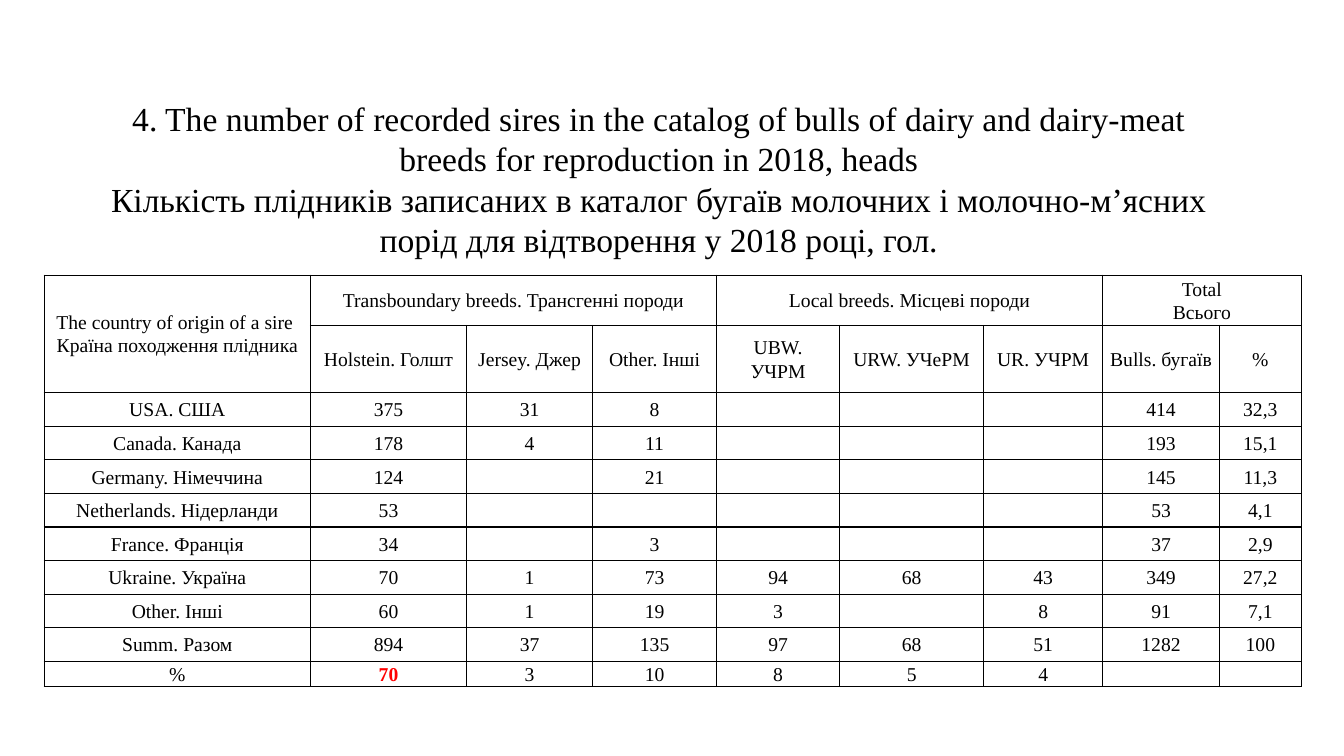
import pptx
import pptx.dml.color
import pptx.enum.text
import pptx.oxml
import pptx.oxml.ns
import pptx.util

COLORS = {"ink": "000000", "accent": "FF0000"}
FONT = "Times New Roman"
COLUMNS, ROWS = 40, 22.5

TITLE = [
    "4. The number of recorded sires in the catalog of bulls of dairy and dairy-meat breeds for reproduction in 2018, heads",
    "Кількість плідників записаних в каталог бугаїв молочних і молочно-м’ясних порід для відтворення у 2018 році, гол.",
]
BREED_TABLE = [
    ["The country of origin of a sire \nКраїна походження плідника", "Transboundary breeds. Трансгенні породи", "", "",
     "Local breeds. Місцеві породи", "", "", "Total\nВсього", ""],
    ["", "Holstein. Голшт", "Jersey. Джер", "Other. Інші", "UBW. УЧРМ", "URW. УЧеРМ", "UR. УЧРМ", "Bulls. бугаїв", "%"],
    ["USA. США", "375", "31", "8", "", "", "", "414", "32,3"],
    ["Canada. Канада", "178", "4", "11", "", "", "", "193", "15,1"],
    ["Germany. Німеччина", "124", "", "21", "", "", "", "145", "11,3"],
    ["Netherlands. Нідерланди", "53", "", "", "", "", "", "53", "4,1"],
    ["France. Франція", "34", "", "3", "", "", "", "37", "2,9"],
    ["Ukraine. Україна", "70", "1", "73", "94", "68", "43", "349", "27,2"],
    ["Other. Інші", "60", "1", "19", "3", "", "8", "91", "7,1"],
    ["Summ. Разом", "894", "37", "135", "97", "68", "51", "1282", "100"],
    ["%", "70", "3", "10", "8", "5", "4", "", ""],
]
COLUMN_WIDTHS = [7.92, 4.65, 3.75, 3.69, 3.66, 4.29, 3.54, 3.48, 2.43]
ROW_HEIGHTS = [1, 2] + [1] * 8 + [0.5]
MERGES = [((0, 0), (1, 0)), ((0, 1), (0, 3)), ((0, 4), (0, 6)), ((0, 7), (0, 8))]
HIGHLIGHT = (10, 1)


def set_all(target, values):
    for name, value in values.items():
        setattr(target, name, value)


class Page:
    """Holds the slide and its style; lengths are columns and rows of the grid."""

    def __init__(self, deck):
        self.slide = deck.slides.add_slide(deck.slide_layouts[5])
        self.column = deck.slide_width / COLUMNS
        self.row = deck.slide_height / ROWS

    def across(self, columns):
        return pptx.util.Emu(round(columns * self.column))

    def down(self, rows):
        return pptx.util.Emu(round(rows * self.row))

    def fill_text(self, frame, lines, size, spacing, color="ink", bold=False):
        for index, line in enumerate(lines):
            para = frame.paragraphs[0] if index == 0 else frame.add_paragraph()
            set_all(para, {"alignment": pptx.enum.text.PP_ALIGN.CENTER, "line_spacing": spacing,
                           "space_before": pptx.util.Pt(0)})
            if line:
                span = para.add_run()
                span.text = line
                set_all(span.font, {"name": FONT, "size": pptx.util.Pt(size), "bold": bold})
                span.font.color.rgb = pptx.dml.color.RGBColor.from_string(COLORS[color])
            else:
                # The end mark's size sets the height of an empty cell.
                end_mark = pptx.oxml.parse_xml(f'<a:endParaRPr {pptx.oxml.ns.nsdecls("a")} sz="{size * 100}"/>')
                para._p.append(end_mark)

    def title(self, lines, left, top, width, height):
        box = self.slide.shapes.title
        set_all(box, {"left": self.across(left), "top": self.down(top),
                      "width": self.across(width), "height": self.down(height)})
        set_all(box.text_frame, {"word_wrap": True, "vertical_anchor": pptx.enum.text.MSO_ANCHOR.TOP,
                                 "auto_size": pptx.enum.text.MSO_AUTO_SIZE.SHAPE_TO_FIT_TEXT})
        self.fill_text(box.text_frame, lines, 24, 1.0)

    def outline(self, cell):
        properties = cell._tc.get_or_add_tcPr()
        for side in "LRTB":
            properties.append(pptx.oxml.parse_xml(
                f'<a:ln{side} {pptx.oxml.ns.nsdecls("a")} w="12700"><a:solidFill>'
                f'<a:srgbClr val="{COLORS["ink"]}"/></a:solidFill></a:ln{side}>'))

    def table(self, values, left, top):
        frame = self.slide.shapes.add_table(
            len(values), len(COLUMN_WIDTHS), self.across(left), self.down(top),
            self.across(sum(COLUMN_WIDTHS)), self.down(sum(ROW_HEIGHTS)))
        grid = frame.table
        set_all(grid, {"first_row": False, "horz_banding": False})
        for column, width in zip(grid.columns, COLUMN_WIDTHS):
            column.width = self.across(width)
        for row, height in zip(grid.rows, ROW_HEIGHTS):
            row.height = self.down(height)
        for first, last in MERGES:
            grid.cell(*first).merge(grid.cell(*last))
        side = pptx.util.Inches(0.07)
        for row, texts in enumerate(values):
            for column, text in enumerate(texts):
                cell = grid.cell(row, column)
                set_all(cell, {"margin_left": side, "margin_right": side, "margin_top": 0, "margin_bottom": 0,
                               "vertical_anchor": pptx.enum.text.MSO_ANCHOR.MIDDLE})
                self.outline(cell)
                cell.fill.background()
                marked = (row, column) == HIGHLIGHT
                self.fill_text(cell.text_frame, text.split("\n"), 14, 1.07, "accent" if marked else "ink", marked)


def main():
    deck = pptx.Presentation()
    set_all(deck, {"slide_width": pptx.util.Inches(13.33), "slide_height": pptx.util.Inches(7.5)})
    page = Page(deck)
    page.title(TITLE, 2.82, 2.76, 33.57, 5.16)
    page.table(BREED_TABLE, 1.32, 8.19)
    deck.save("out.pptx")


if __name__ == "__main__":
    main()
